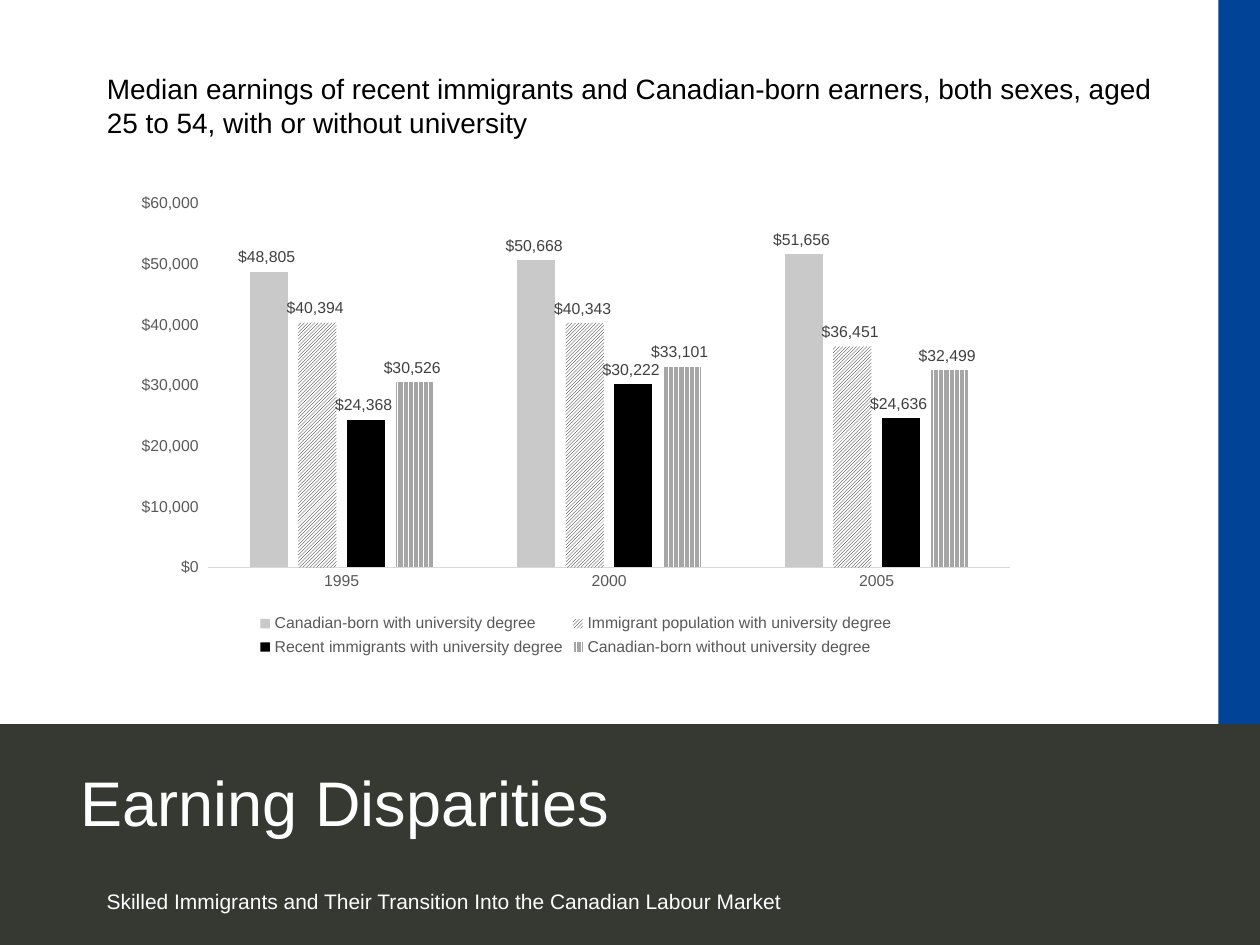
from pptx import Presentation, util as u
from pptx.chart.data import CategoryChartData
from pptx.dml.color import RGBColor
from pptx.enum import chart as ch, dml, shapes, text
from pptx.oxml.ns import qn
from lxml import etree

COLORS = {
    "blue": "004397", "dark": "363832", "white": "FFFFFF", "black": "000000",
    "axis": "D9D9D9", "axis_text": "595959", "label": "404040",
    "light": "C9C9C9", "grey": "A6A6A6",
}
MONEY = '"$"#,##0_);[Red]\\("$"#,##0\\)'
YEARS = ["1995", "2000", "2005"]
SERIES = [
    ("Canadian-born with university degree", (48805, 50668, 51656), "light", None),
    ("Immigrant population with university degree", (40394, 40343, 36451), "black",
     dml.MSO_PATTERN.LIGHT_UPWARD_DIAGONAL),
    ("Recent immigrants with university degree", (24368, 30222, 24636), "black", None),
    ("Canadian-born without university degree", (30526, 33101, 32499), "grey",
     dml.MSO_PATTERN.DARK_VERTICAL),
]


def rgb(name):
    return RGBColor.from_string(COLORS[name])


class Deck:
    font = "Arial"

    def __init__(self, width, height):
        self.prs = Presentation()
        self.prs.slide_width, self.prs.slide_height = u.Cm(width), u.Cm(height)
        self.s = self.prs.slides.add_slide(self.prs.slide_layouts[1])

    def style(self, font, size, color):
        for key, value in {"name": self.font, "size": u.Pt(size), "bold": False}.items():
            setattr(font, key, value)
        font.color.rgb = rgb(color)

    def band(self, box, color):
        sp = self.s.shapes.add_shape(shapes.MSO_SHAPE.RECTANGLE, *map(u.Cm, box))
        sp.shadow.inherit = False
        sp.fill.solid()
        sp.fill.fore_color.rgb = rgb(color)
        sp.line.fill.background()
        self.s.shapes._spTree.insert(2, sp._element)

    def fill_text(self, sp, box, words, size, color, **frame):
        for key, value in zip(("left", "top", "width", "height"), box):
            setattr(sp, key, u.Cm(value))
        tf = sp.text_frame
        fmt = {"word_wrap": True, "auto_size": text.MSO_AUTO_SIZE.NONE,
               "vertical_anchor": text.MSO_ANCHOR.TOP, **frame}
        for key, value in fmt.items():
            setattr(tf, key, value)
        p = tf.paragraphs[0]
        p.alignment = text.PP_ALIGN.LEFT
        p.space_before = u.Pt(0)
        pPr = p._p.get_or_add_pPr()
        pPr.set("marL", "0")
        pPr.set("indent", "0")
        etree.SubElement(pPr, qn("a:buNone"))
        r = p.add_run()
        r.text = words
        self.style(r.font, size, color)

    def title(self, box, words, size, color):
        self.fill_text(self.s.shapes.title, box, words, size, color,
                       vertical_anchor=text.MSO_ANCHOR.MIDDLE, margin_bottom=u.Cm(1.27))

    def body(self, box, words, size, color):
        self.fill_text(self.s.placeholders[1], box, words, size, color)

    def text(self, box, words, size, color):
        self.fill_text(self.s.shapes.add_textbox(*map(u.Cm, box)), box, words, size, color)

    def axis(self, axis):
        axis.has_major_gridlines = False
        axis.major_tick_mark = axis.minor_tick_mark = ch.XL_TICK_MARK.NONE
        self.style(axis.tick_labels.font, 9, "axis_text")

    def columns(self, box, cats, series):
        data = CategoryChartData(number_format=MONEY)
        data.categories = cats
        for name, values, *_ in series:
            data.add_series(name, values)
        chart = self.s.shapes.add_chart(
            ch.XL_CHART_TYPE.COLUMN_CLUSTERED, *map(u.Cm, box), data).chart
        self.style(chart.font, 10, "black")
        chart.has_title = False
        chart.has_legend = True
        chart.legend.position = ch.XL_LEGEND_POSITION.BOTTOM
        chart.legend.include_in_layout = False
        self.style(chart.legend.font, 9, "axis_text")

        cat, val = chart.category_axis, chart.value_axis
        self.axis(cat)
        self.axis(val)
        cat.format.line.color.rgb = rgb("axis")
        cat.format.line.width = u.Pt(0.75)
        val.format.line.fill.background()
        val.minimum_scale, val.maximum_scale, val.major_unit = 0, 60000, 10000
        val.tick_labels.number_format = MONEY
        val.tick_labels.number_format_is_linked = False

        plot = chart.plots[0]
        plot.gap_width, plot.overlap, plot.vary_by_categories = 219, -27, False
        for ser, (_, _, color, pattern) in zip(plot.series, series):
            fill = ser.format.fill
            if pattern:
                fill.patterned()
                fill.pattern = pattern
                fill.back_color.rgb = rgb("white")
            else:
                fill.solid()
            fill.fore_color.rgb = rgb(color)
            labels = ser.data_labels
            labels.show_value = True
            labels.position = ch.XL_LABEL_POSITION.OUTSIDE_END
            self.style(labels.font, 9, "label")


def main():
    d = Deck(25.4, 19.05)
    d.band((24.56, 0, 0.84, 14.6), "blue")
    d.band((0, 14.6, 25.4, 4.45), "dark")
    d.text((1.9, 17.78, 14.6, 0.84),
           "Skilled Immigrants and Their Transition Into the Canadian Labour Market",
           12, "white")
    d.title((1.37, 15.77, 22.66, 1.9), "Earning Disparities", 36, "white")
    d.body((1.9, 1.32, 21.6, 12.65),
           "Median earnings of recent immigrants and Canadian-born earners, "
           "both sexes, aged 25 to 54, with or without university", 16, "black")
    d.columns((2.49, 3.73, 18.24, 9.6), YEARS, SERIES)
    d.prs.save("out.pptx")


if __name__ == "__main__":
    main()
